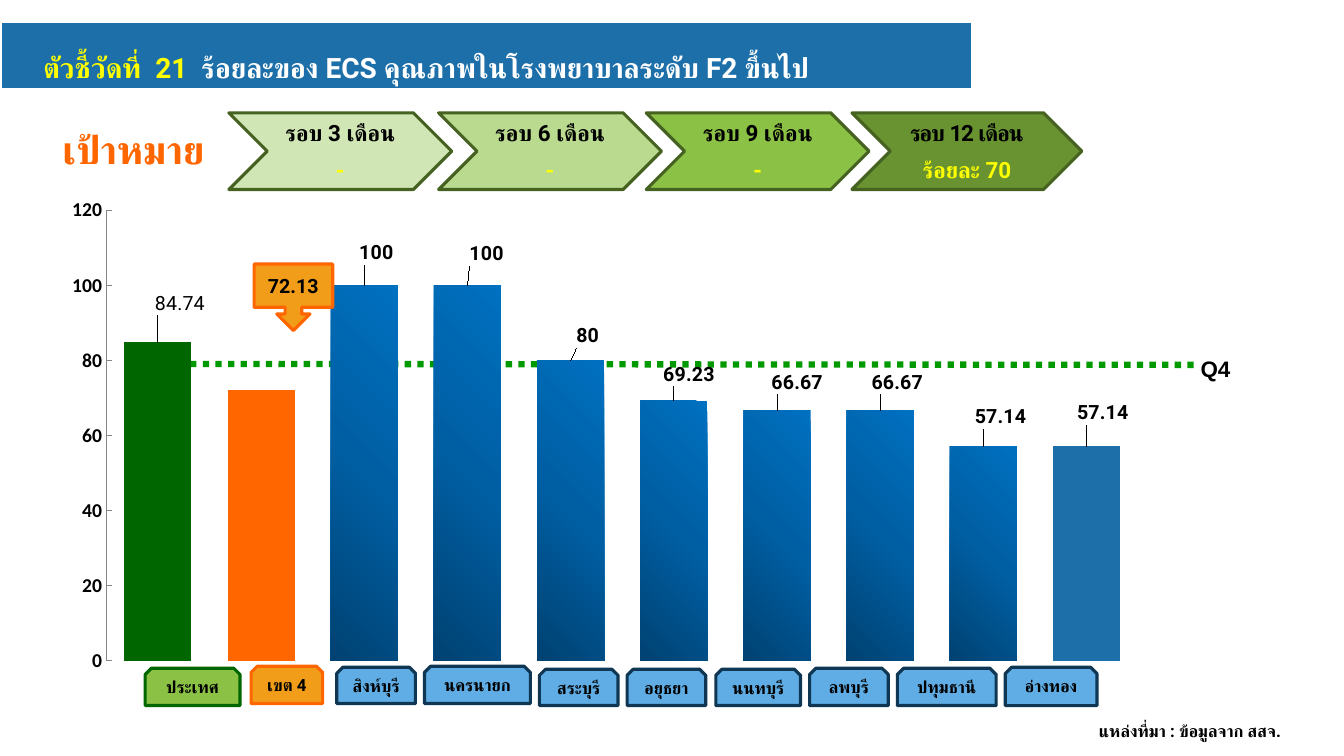
from pptx import Presentation
from pptx.chart.data import CategoryChartData
from pptx.dml.color import RGBColor
from pptx.enum.chart import XL_CHART_TYPE, XL_LABEL_POSITION, XL_TICK_MARK
from pptx.enum.dml import MSO_LINE
from pptx.enum.shapes import MSO_CONNECTOR, MSO_SHAPE
from pptx.enum.text import MSO_ANCHOR, MSO_AUTO_SIZE, PP_ALIGN
from pptx.oxml import parse_xml
from pptx.oxml.ns import nsdecls, qn
from pptx.util import Inches, Pt

TITLE = [("ตัวชี้วัดที่  21  ", "FFFF00"),
         ("ร้อยละของ ECS คุณภาพในโรงพยาบาลระดับ F2 ขึ้นไป", "FFFFFF")]
ROUNDS = [("รอบ 3 เดือน", "-", 2.27, 2.21, "D1E6B5", 0),
          ("รอบ 6 เดือน", "-", 4.35, 2.21, "B9DA8F", 0),
          ("รอบ 9 เดือน", "-", 6.41, 2.21, "8BC145", 0),
          ("รอบ 12 เดือน", "ร้อยละ 70", 8.45, 2.28, "699331", -80)]
GREEN, ORANGE, BLUE = ("8BC145", "006600"), ("F19D19", "FF6600"), ("5FADE4", "0F3754")
AREAS = [("ประเทศ", 1.44, 6.63, 0.94, 0.37, GREEN),
         ("เขต 4", 2.49, 6.61, 0.71, 0.37, ORANGE),
         ("สิงห์บุรี", 3.34, 6.62, 0.78, 0.36, BLUE),
         ("นครนายก", 4.21, 6.61, 1.05, 0.37, BLUE),
         ("สระบุรี", 5.35, 6.64, 0.78, 0.36, BLUE),
         ("อยุธยา", 6.22, 6.64, 0.78, 0.36, BLUE),
         ("นนทบุรี", 7.1, 6.64, 0.84, 0.36, BLUE),
         ("ลพบุรี", 8.03, 6.63, 0.78, 0.37, BLUE),
         ("ปทุมธานี", 8.9, 6.63, 0.98, 0.37, BLUE),
         ("อ่างทอง", 9.97, 6.62, 0.91, 0.38, BLUE)]
VALUES = [84.74, 72.13, 100, 100, 80, 69.23, 66.67, 66.67, 57.14, 57.14]
LABEL_SHIFTS = {0: (0.22, -0.23), 2: (0.12, -0.16), 3: (0.19, -0.15),
                4: (0.17, -0.08), 5: (0.15, -0.1), 6: (0.2, -0.12),
                7: (0.17, -0.12), 8: (0.17, -0.13), 9: (0.16, -0.17)}
BAR_COLORS = {0: "006600", 1: "FF6600"}
GRADIENT_BARS = range(2, 9)
STOPS = [(0, "004272"), (50, "005EA2"), (100, "0070C0")]
CHART_W, CHART_H = 10.82, 5


def rgb(color):
    return RGBColor.from_string(color)


def set_font(font, color="000000", **values):
    for name, value in {"name": "Roboto", "bold": True, **values}.items():
        setattr(font, name, value)
    font.color.rgb = rgb(color)


def add_run(p, text, size, color="000000", spacing=0, name="Roboto"):
    r = p.add_run()
    r.text = text
    set_font(r.font, color, size=Pt(size), name=name)
    rPr = r._r.get_or_add_rPr()
    rPr.append(parse_xml(f'<a:cs {nsdecls("a")} typeface="{name}"/>'))
    if spacing:
        rPr.set("spc", str(spacing))


def paint(sp, fill, line, width):
    sp.fill.solid()
    sp.fill.fore_color.rgb = rgb(fill)
    sp.line.color.rgb = rgb(line)
    sp.line.width = Pt(width)


def add_box(s, kind, box, colors, anchor=MSO_ANCHOR.MIDDLE):
    sp = s.shapes.add_shape(kind, *map(Inches, box))
    sp.shadow.inherit = False
    paint(sp, *colors, 2.25)
    sp.text_frame.vertical_anchor = anchor
    p = sp.text_frame.paragraphs[0]
    p.alignment = PP_ALIGN.CENTER
    return sp.text_frame, p


def add_text(s, text, box, size, color="000000", align=PP_ALIGN.LEFT, wrap=False, name="Roboto"):
    tf = s.shapes.add_textbox(*map(Inches, box)).text_frame
    tf.word_wrap = wrap
    p = tf.paragraphs[0]
    p.alignment = align
    add_run(p, text, size, color, name=name)


def add_title(s):
    sp = s.shapes.title
    sp.left, sp.top, sp.width, sp.height = map(Inches, (0.01, 0.22, 9.63, 0.66))
    sp._element.spPr.append(parse_xml(
        f'<a:prstGeom {nsdecls("a")} prst="homePlate"><a:avLst/></a:prstGeom>'))
    paint(sp, "1D6FA9", "FFFFFF", 1.5)
    tf = sp.text_frame
    for name, value in {"vertical_anchor": MSO_ANCHOR.BOTTOM, "word_wrap": True,
                        "auto_size": MSO_AUTO_SIZE.NONE, "margin_left": Inches(0.42)}.items():
        setattr(tf, name, value)
    p = tf.paragraphs[0]
    p.alignment = PP_ALIGN.LEFT
    for text, color in TITLE:
        add_run(p, text, 20, color)


def add_target_line(s):
    cn = s.shapes.add_connector(MSO_CONNECTOR.STRAIGHT,
                                *map(Inches, (1.26, 3.61, 11.84, 3.62)))
    cn.line.color.rgb = rgb("009900")
    cn.line.width = Pt(4.5)
    cn.line.dash_style = MSO_LINE.ROUND_DOT
    cn._element.spPr.append(parse_xml(f'<a:effectLst {nsdecls("a")}/>'))


def layout_xml(x, y, extra=""):
    return parse_xml(f'<c:layout {nsdecls("c")}><c:manualLayout>{extra}'
                     f'<c:x val="{x:.4f}"/><c:y val="{y:.4f}"/></c:manualLayout></c:layout>')


def clear_backgrounds(chart):
    no_fill = (f'<c:spPr {nsdecls("c", "a")}><a:noFill/>'
               '<a:ln><a:noFill/></a:ln></c:spPr>')
    space = chart._chartSpace
    space.find(qn("c:chart")).addnext(parse_xml(no_fill))
    area = space.find(".//" + qn("c:plotArea"))
    area.append(parse_xml(no_fill))
    for old in area.findall(qn("c:layout")):
        area.remove(old)
    layout = layout_xml(0.054, 0.025, '<c:layoutTarget val="inner"/>'
                        '<c:xMode val="edge"/><c:yMode val="edge"/>')
    for tag, size in (("w", 0.946), ("h", 0.894)):
        layout[0].append(parse_xml(f'<c:{tag} {nsdecls("c")} val="{size}"/>'))
    area.insert(0, layout)


def format_bars(series):
    series.format.fill.solid()
    series.format.fill.fore_color.rgb = rgb("1D6FA9")
    for i, color in BAR_COLORS.items():
        fill = series.points[i].format.fill
        fill.solid()
        fill.fore_color.rgb = rgb(color)
    for i in GRADIENT_BARS:
        series.points[i].format.fill.gradient()
    stops = "".join(f'<a:gs pos="{pos * 1000}"><a:srgbClr val="{color}"/></a:gs>'
                    for pos, color in STOPS)
    for old in list(series._element.iter(qn("a:gradFill"))):
        old.getparent().replace(old, parse_xml(
            f'<a:gradFill {nsdecls("a")} rotWithShape="1"><a:gsLst>{stops}</a:gsLst>'
            '<a:path path="circle"><a:fillToRect t="100000" r="100000"/></a:path>'
            '</a:gradFill>'))


def format_labels(series):
    series.data_labels.show_value = False
    for i in LABEL_SHIFTS:
        label = series.points[i].data_label
        set_font(label.font, size=Pt(14), bold=i > 0)
        label.position = XL_LABEL_POSITION.OUTSIDE_END
    labels = series._element.iter(qn("c:dLbl"))
    for dLbl, (dx, dy) in zip(list(labels), LABEL_SHIFTS.values()):
        dLbl.find(qn("c:idx")).addnext(layout_xml(dx / CHART_W, dy / CHART_H))


def add_bars(s):
    data = CategoryChartData()
    data.categories = [str(i + 1) for i in range(len(VALUES))]
    data.add_series("Series 1", VALUES)
    chart = s.shapes.add_chart(XL_CHART_TYPE.COLUMN_CLUSTERED,
                               *map(Inches, (0.47, 1.96, CHART_W, CHART_H)), data).chart
    set_font(chart.font, name="Calibri", size=Pt(18), bold=False)
    chart.has_legend = chart.has_title = False
    chart.category_axis.visible = False
    axis = chart.value_axis
    for name, value in {"minimum_scale": 0, "maximum_scale": 120, "major_unit": 20,
                        "has_major_gridlines": False,
                        "major_tick_mark": XL_TICK_MARK.INSIDE,
                        "minor_tick_mark": XL_TICK_MARK.NONE}.items():
        setattr(axis, name, value)
    axis.format.line.color.rgb = rgb("868686")
    set_font(axis.tick_labels.font, name="Calibri", size=Pt(14))
    plot = chart.plots[0]
    plot.gap_width = 54
    plot.vary_by_categories = False
    format_bars(plot.series[0])
    format_labels(plot.series[0])
    clear_backgrounds(chart)


def main():
    prs = Presentation()
    prs.slide_width, prs.slide_height = Inches(13.33), Inches(7.5)
    s = prs.slides.add_slide(prs.slide_layouts[5])
    add_title(s)
    add_target_line(s)
    add_bars(s)
    add_text(s, "Q4", (11.81, 3.47, 0.59, 0.37), 16, wrap=True, name="Arial")
    add_text(s, "เป้าหมาย", (0.41, 1.19, 1.83, 0.57), 28, "FF6600", PP_ALIGN.CENTER)
    for period, goal, left, width, fill, spacing in ROUNDS:
        tf, p = add_box(s, MSO_SHAPE.CHEVRON, (left, 1.12, width, 0.76), (fill, "466221"))
        add_run(p, period, 16, spacing=spacing)
        p = tf.add_paragraph()
        p.alignment = PP_ALIGN.CENTER
        p.space_before = Pt(7)
        add_run(p, goal, 16, "FFFF00")
    add_text(s, "แหล่งที่มา : ข้อมูลจาก สสจ.", (10.8, 7.1, 2.29, 0.3), 12)
    tf, p = add_box(s, MSO_SHAPE.DOWN_ARROW_CALLOUT, (2.52, 2.62, 0.78, 0.66), ORANGE)
    add_run(p, "72.13", 14)
    for area, *box, colors in AREAS:
        tf, p = add_box(s, MSO_SHAPE.SNIP_2_SAME_RECTANGLE, box, colors, MSO_ANCHOR.TOP)
        add_run(p, area, 12)
    prs.save("out.pptx")


if __name__ == "__main__":
    main()
